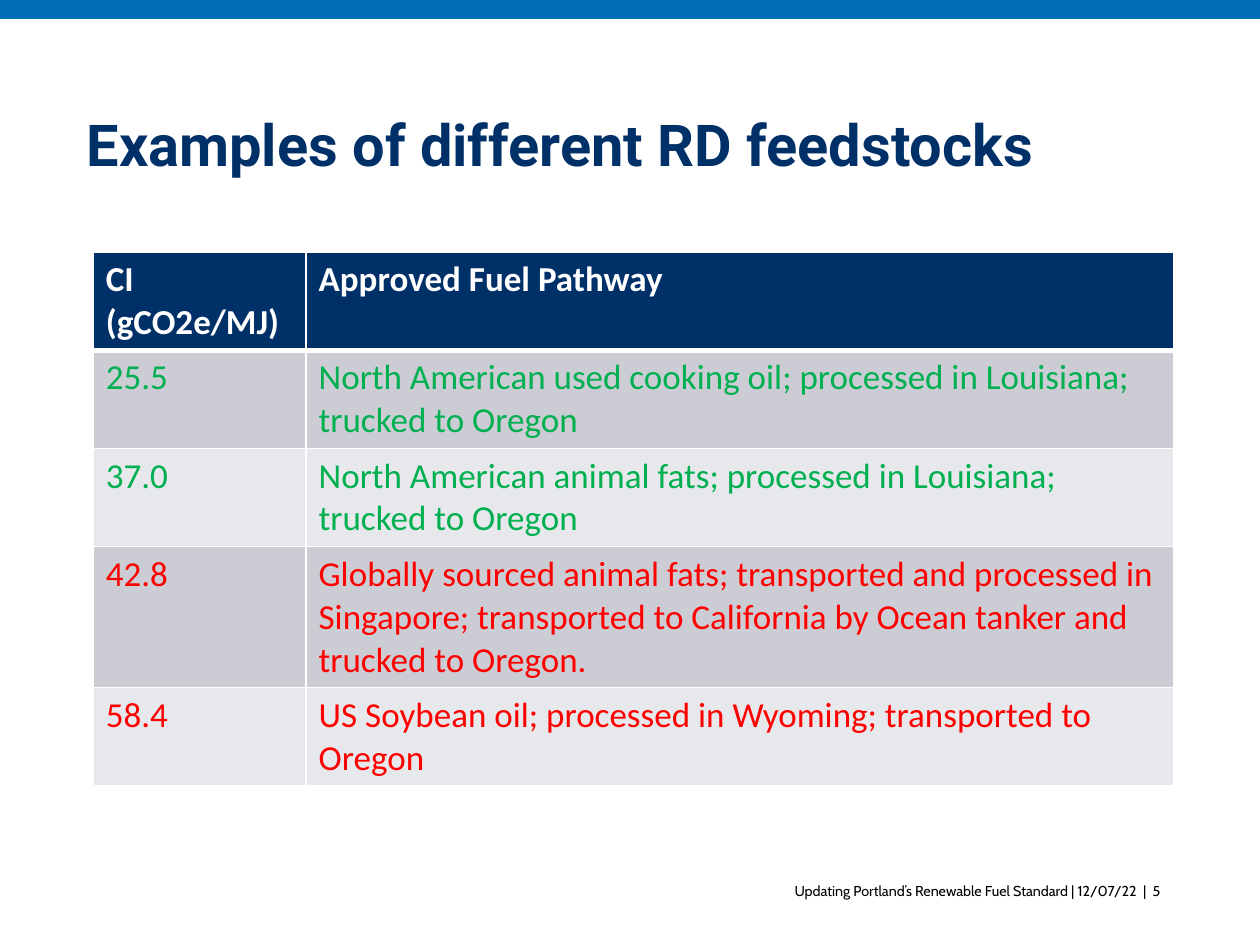
from dataclasses import dataclass

from lxml.etree import SubElement
from pptx import Presentation
from pptx.dml.color import RGBColor as Color
from pptx.enum.shapes import MSO_SHAPE as Shape
from pptx.enum.text import MSO_ANCHOR as Anchor, PP_ALIGN as Align
from pptx.oxml.ns import qn
from pptx.util import Cm, Pt


@dataclass(frozen=True)
class Theme:
    blue: str = "006DB6"
    navy: str = "003068"
    white: str = "FFFFFF"
    black: str = "000000"
    green: str = "00B050"
    red: str = "FF0000"
    bands: tuple = ("CCCDD4", "E7E8EB")
    title_size: float = 33
    table_size: float = 20
    footer_size: float = 8.2
    title_font: str = "Roboto"
    table_font: str = "Calibri"
    footer_font: str = "Cabin"


class SlideBuilder:
    def __init__(self, slide, theme):
        self.slide = slide
        self.theme = theme

    def fill_text(self, frame, text, color, font_format, paragraph_format):
        paragraph = frame.paragraphs[0]
        paragraph.text = text
        for name, value in paragraph_format.items():
            setattr(paragraph, name, value)
        font = paragraph.runs[0].font
        for name, value in font_format.items():
            setattr(font, name, value)
        font.color.rgb = Color.from_string(color)

    def bar(self, box, color):
        shape = self.slide.shapes.add_shape(Shape.RECTANGLE, *map(Cm, box))
        shape.shadow.inherit = False
        shape.fill.solid()
        shape.fill.fore_color.rgb = Color.from_string(color)
        shape.line.fill.background()

    def text(self, box, text, color, font_format, anchor=Anchor.TOP, **paragraph_format):
        frame = self.slide.shapes.add_textbox(*map(Cm, box)).text_frame
        frame.word_wrap = True
        frame.vertical_anchor = anchor
        self.fill_text(frame, text, color, font_format, paragraph_format)

    def borders(self, cell, color, widths):
        properties = cell._tc.get_or_add_tcPr()
        for index, (side, width) in enumerate(widths.items()):
            line = properties.makeelement(qn(f"a:{side}"), {"w": str(Pt(width))})
            fill = SubElement(line, qn("a:solidFill"))
            SubElement(fill, qn("a:srgbClr"), val=color)
            properties.insert(index, line)

    def table(self, left, top, widths, heights, rows):
        theme = self.theme
        frame = self.slide.shapes.add_table(
            len(rows), len(widths), Cm(left), Cm(top), Cm(sum(widths)), Cm(sum(heights)))
        table = frame.table
        for column, width in zip(table.columns, widths):
            column.width = Cm(width)
        for row, height in zip(table.rows, heights):
            row.height = Cm(height)
        for index, (color, *texts) in enumerate(rows):
            header = index == 0
            fill = theme.navy if header else theme.bands[(index - 1) % 2]
            edges = {"lnL": 1, "lnR": 1, "lnT": 3 if index == 1 else 1, "lnB": 3 if header else 1}
            font_format = {"name": theme.table_font, "size": Pt(theme.table_size), "bold": header}
            for cell, text in zip(table.rows[index].cells, texts):
                cell.fill.solid()
                cell.fill.fore_color.rgb = Color.from_string(fill)
                self.borders(cell, theme.white, edges)
                self.fill_text(cell.text_frame, text, color, font_format, {})


def main():
    theme = Theme()
    presentation = Presentation()
    presentation.slide_width = Cm(25.4)
    presentation.slide_height = Cm(19.05)
    slide = presentation.slides.add_slide(presentation.slide_layouts[6])
    builder = SlideBuilder(slide, theme)

    builder.bar((0, 0, 25.4, 0.38), theme.blue)
    builder.text(
        (1.5, 1.14, 22.15, 3.68), "Examples of different RD feedstocks", theme.navy,
        {"name": theme.title_font, "size": Pt(theme.title_size), "bold": True},
        anchor=Anchor.MIDDLE, line_spacing=0.9)
    builder.table(1.88, 5.08, (4.29, 17.5), (1.98, 1.98, 1.98, 2.84, 1.98), [
        (theme.white, "CI (gCO2e/MJ)", "Approved Fuel Pathway"),
        (theme.green, "25.5",
         "North American used cooking oil; processed in Louisiana; trucked to Oregon"),
        (theme.green, "37.0",
         "North American animal fats; processed in Louisiana; trucked to Oregon"),
        (theme.red, "42.8",
         "Globally sourced animal fats; transported and processed in Singapore; "
         "transported to California by Ocean tanker and trucked to Oregon."),
        (theme.red, "58.4", "US Soybean oil; processed in Wyoming; transported to Oregon"),
    ])
    builder.text(
        (9.4, 17.65, 14.25, 1.02),
        "Updating Portland’s Renewable Fuel Standard | 12/07/22  |  5", theme.black,
        {"name": theme.footer_font, "size": Pt(theme.footer_size)}, alignment=Align.RIGHT)

    presentation.save("out.pptx")


if __name__ == "__main__":
    main()
